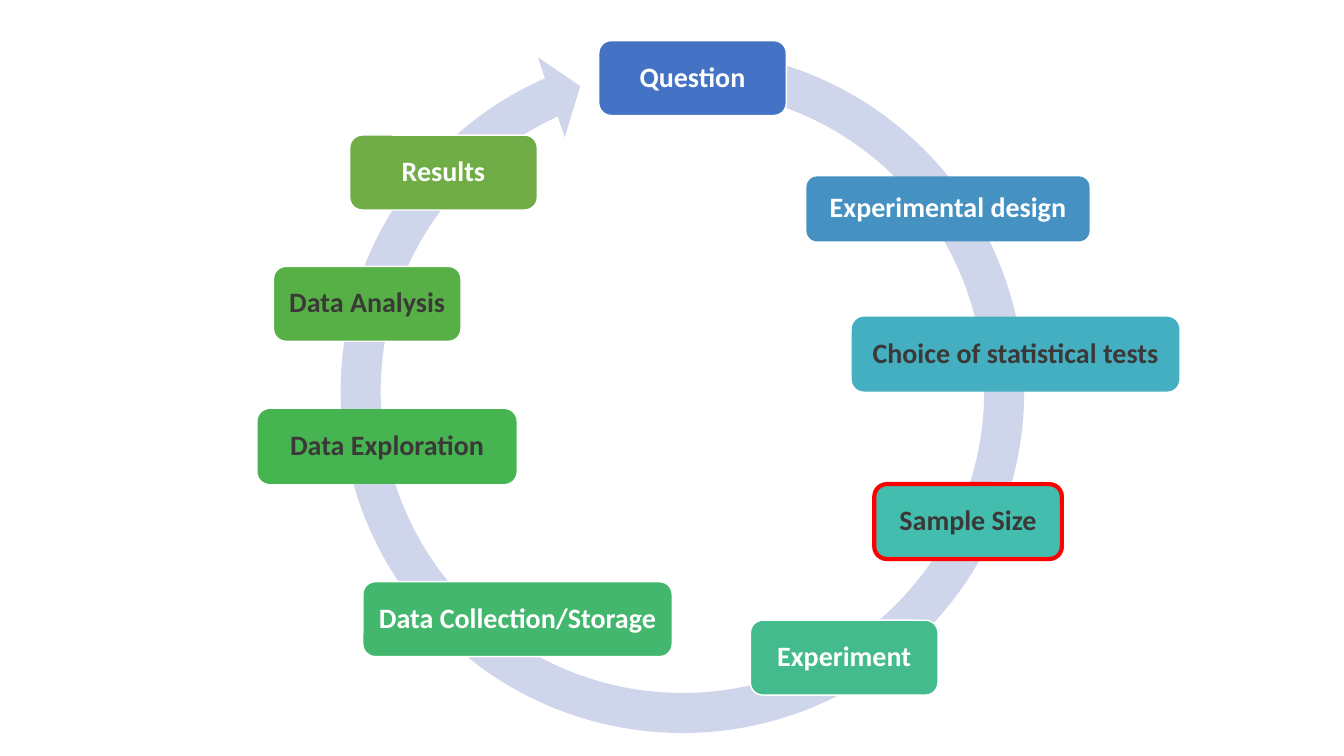
from pptx import Presentation
from pptx.dml.color import RGBColor
from pptx.enum.shapes import MSO_SHAPE
from pptx.enum.text import MSO_ANCHOR, PP_ALIGN
from pptx.util import Pt

WHITE, DARK, RED = "FFFFFF", "3B3838", "FF0000"
STEP_W, STEP_H = 134, 53.5

# label, left, top, width, height, fill, text colour, outline, outline width
STEPS = [
    ("Question", 427.7, 29, STEP_W, STEP_H, "4472C4", WHITE, WHITE, 1),
    ("Experimental design", 576, 126, 202.3, 46.5, "4491C2", WHITE, None, 0),
    ("Choice of statistical tests", 608.4, 226.2, 234, STEP_H, "43AFC0", DARK, None, 0),
    ("Sample Size", 624.5, 345.8, STEP_W, STEP_H, "43BDAE", DARK, RED, 3),
    ("Experiment", 536, 443, STEP_W, STEP_H, "43BB8D", WHITE, WHITE, 1),
    ("Data Collection/Storage", 259.2, 415.5, 221, STEP_H, "44B76E", WHITE, WHITE, 1),
    ("Data Exploration", 184, 292.2, 185, STEP_H, "45B451", DARK, None, 0),
    ("Data Analysis", 195.3, 190.3, STEP_W, STEP_H, "56B046", DARK, WHITE, 1),
    ("Results", 249.8, 96.5, STEP_W, STEP_H, "70AD47", WHITE, WHITE, 1),
]


def rgb(value):
    return RGBColor.from_string(value)


def add_shape(slide, kind, left, top, width, height, fill, line=None, line_width=0):
    sp = slide.shapes.add_shape(kind, Pt(left), Pt(top), Pt(width), Pt(height))
    sp.shadow.inherit = False
    sp.fill.solid()
    sp.fill.fore_color.rgb = rgb(fill)
    if line:
        sp.line.color.rgb = rgb(line)
        sp.line.width = Pt(line_width)
    else:
        sp.line.fill.background()
    return sp


def add_cycle_arrow(slide):
    sp = add_shape(slide, MSO_SHAPE.CIRCULAR_ARROW, 227.5, 19.5, 520, 520, "CFD5EA")
    # Band thickness, head angle, end angle, start angle, head width
    for i, value in enumerate((0.055, 3.307, 147.574, 168.131, 0.058)):
        sp.adjustments[i] = value


def add_step(slide, label, left, top, width, height, fill, color, line, line_width):
    sp = add_shape(slide, MSO_SHAPE.ROUNDED_RECTANGLE, left, top, width, height,
                   fill, line, line_width)
    tf = sp.text_frame
    tf.word_wrap = True
    tf.vertical_anchor = MSO_ANCHOR.MIDDLE
    tf.margin_left = tf.margin_right = tf.margin_top = tf.margin_bottom = Pt(6)
    tf.text = label
    p = tf.paragraphs[0]
    p.alignment = PP_ALIGN.CENTER
    p.line_spacing = 0.9
    font = p.runs[0].font
    font.name = "Calibri"
    font.size = Pt(20)
    font.bold = True
    font.color.rgb = rgb(color)


def main():
    prs = Presentation()
    prs.slide_width, prs.slide_height = Pt(960), Pt(540)
    slide = prs.slides.add_slide(prs.slide_layouts[6])

    # Ring behind the steps
    add_cycle_arrow(slide)

    # Steps of the research cycle, clockwise
    for step in STEPS:
        add_step(slide, *step)

    prs.save("out.pptx")


if __name__ == "__main__":
    main()
